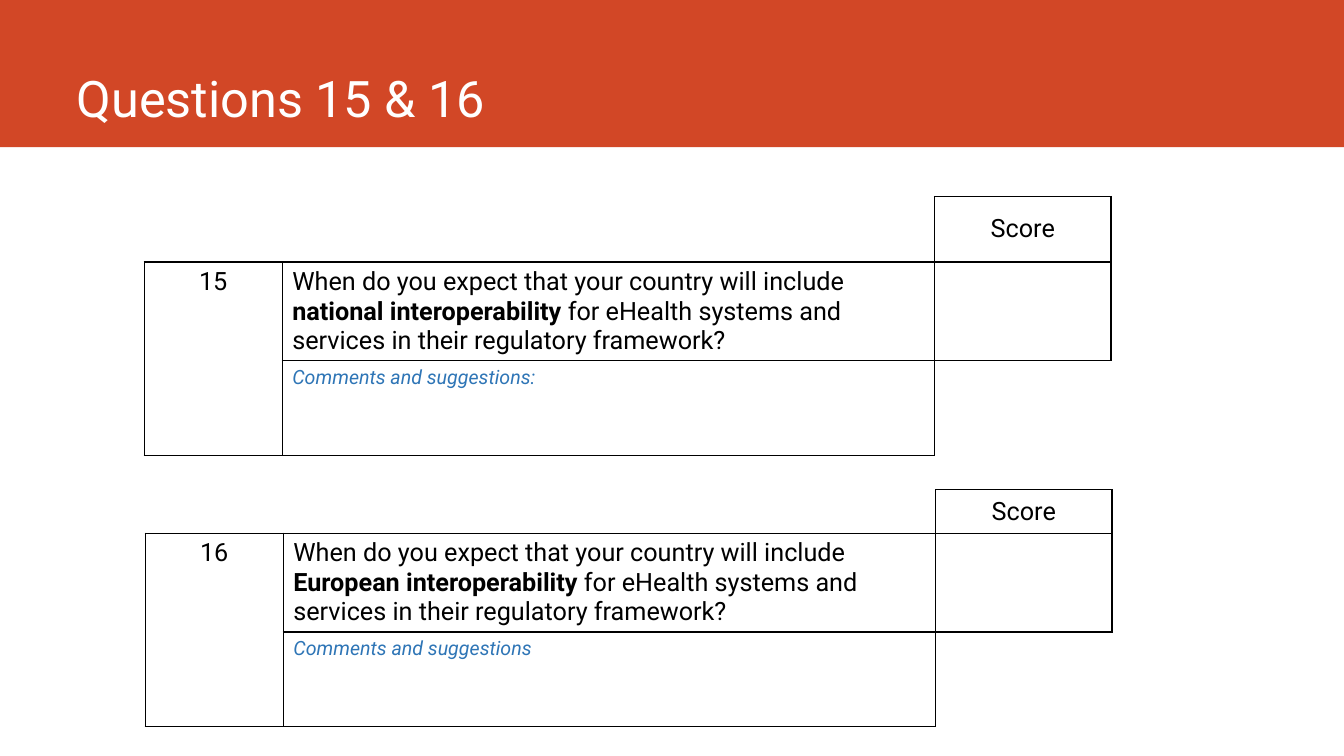
from dataclasses import dataclass

from lxml import etree
from pptx import Presentation
from pptx.dml.color import RGBColor
from pptx.enum.shapes import MSO_SHAPE
from pptx.enum.text import MSO_ANCHOR, MSO_AUTO_SIZE, PP_ALIGN
from pptx.oxml.ns import qn
from pptx.util import Inches, Pt

RECTANGLE = MSO_SHAPE.RECTANGLE
TOP, MIDDLE, BOTTOM = MSO_ANCHOR.TOP, MSO_ANCHOR.MIDDLE, MSO_ANCHOR.BOTTOM
LEFT, CENTER = PP_ALIGN.LEFT, PP_ALIGN.CENTER
NO_AUTOFIT = MSO_AUTO_SIZE.NONE
TITLE_ONLY = 5


@dataclass(frozen=True)
class Theme:
    font: str = "Roboto"
    banner: str = "D24726"
    title: str = "FFFFFF"
    text: str = "000000"
    comment: str = "2E75B6"
    title_size: int = 36
    text_size: int = 18
    comment_size: int = 14
    rule_width: int = 1


THEME = Theme()
COLUMN_WIDTHS = (1.37, 6.47, 1.75)
ANSWER_ROW_HEIGHT = 0.94
# Cells outside the question form are ruled only where they touch it.
OPEN_CELL_EDGES = {(0, 0): "RB", (0, 1): "RB", (2, 2): "LT"}


def add_run(paragraph, text, size=THEME.text_size, color=THEME.text,
            bold=False, italic=False):
    run = paragraph.add_run()
    run.text = text
    font = run.font
    font.name, font.size = THEME.font, Pt(size)
    font.bold, font.italic = bold, italic
    font.color.rgb = RGBColor.from_string(color)


def add_banner(slide, heading, left, top, width, height):
    """Place the coloured band and set the slide title on it."""
    band = slide.shapes.add_shape(RECTANGLE, Inches(left), Inches(top),
                                  Inches(width), Inches(height))
    band.shadow.inherit = False
    band.fill.solid()
    band.fill.fore_color.rgb = RGBColor.from_string(THEME.banner)
    band.line.fill.background()

    title = slide.shapes.title
    title._element.addprevious(band._element)
    title.left, title.top = Inches(left + 0.66), Inches(top)
    title.width, title.height = Inches(11.76), Inches(height - 0.14)
    frame = title.text_frame
    frame.word_wrap = True
    frame.auto_size = NO_AUTOFIT
    frame.vertical_anchor = BOTTOM
    frame.paragraphs[0].alignment = LEFT
    add_run(frame.paragraphs[0], heading, THEME.title_size, THEME.title)


def rule_cell(cell, edges):
    """Draw the named edges of a cell and leave its other edges blank."""
    properties = cell._tc.get_or_add_tcPr()
    for edge in "LRTB":
        line = etree.SubElement(properties, qn(f"a:ln{edge}"),
                                w=str(Pt(THEME.rule_width)))
        if edge in edges:
            fill = etree.SubElement(line, qn("a:solidFill"))
            etree.SubElement(fill, qn("a:srgbClr"), val=THEME.text)
        else:
            etree.SubElement(line, qn("a:noFill"))
    cell.fill.background()


def cell_paragraph(cell, alignment=LEFT, anchor=TOP):
    cell.vertical_anchor = anchor
    paragraph = cell.text_frame.paragraphs[0]
    paragraph.alignment = alignment
    return paragraph


def add_question(slide, number, topic, comment, left, top, score_height):
    row_heights = (score_height, ANSWER_ROW_HEIGHT, ANSWER_ROW_HEIGHT)
    form = slide.shapes.add_table(
        len(row_heights), len(COLUMN_WIDTHS), Inches(left), Inches(top),
        Inches(sum(COLUMN_WIDTHS)), Inches(sum(row_heights))).table
    form.first_row = form.horz_banding = False
    for column, width in zip(form.columns, COLUMN_WIDTHS):
        column.width = Inches(width)
    for r, height in enumerate(row_heights):
        form.rows[r].height = Inches(height)
        for c in range(len(COLUMN_WIDTHS)):
            rule_cell(form.cell(r, c), OPEN_CELL_EDGES.get((r, c), "LRTB"))
    form.cell(0, 0).merge(form.cell(0, 1))
    form.cell(1, 0).merge(form.cell(2, 0))

    add_run(cell_paragraph(form.cell(0, 2), CENTER, MIDDLE), "Score")
    add_run(cell_paragraph(form.cell(1, 0), CENTER), number)
    question = cell_paragraph(form.cell(1, 1))
    add_run(question, "When do you expect that your country will include ")
    add_run(question, topic, bold=True)
    add_run(question, " for eHealth systems and services in their "
                      "regulatory framework?")
    add_run(cell_paragraph(form.cell(2, 1)), comment, THEME.comment_size,
            THEME.comment, italic=True)


def main():
    deck = Presentation()
    deck.slide_width, deck.slide_height = Inches(13.33), Inches(7.5)
    slide = deck.slides.add_slide(deck.slide_layouts[TITLE_ONLY])
    add_banner(slide, "Questions 15 & 16", 0, 0, 13.33, 1.46)
    add_question(slide, "15", "national interoperability",
                 "Comments and suggestions:", 1.43, 1.95, 0.65)
    add_question(slide, "16", "European interoperability",
                 "Comments and suggestions", 1.44, 4.86, 0.43)
    deck.save("out.pptx")


if __name__ == "__main__":
    main()
